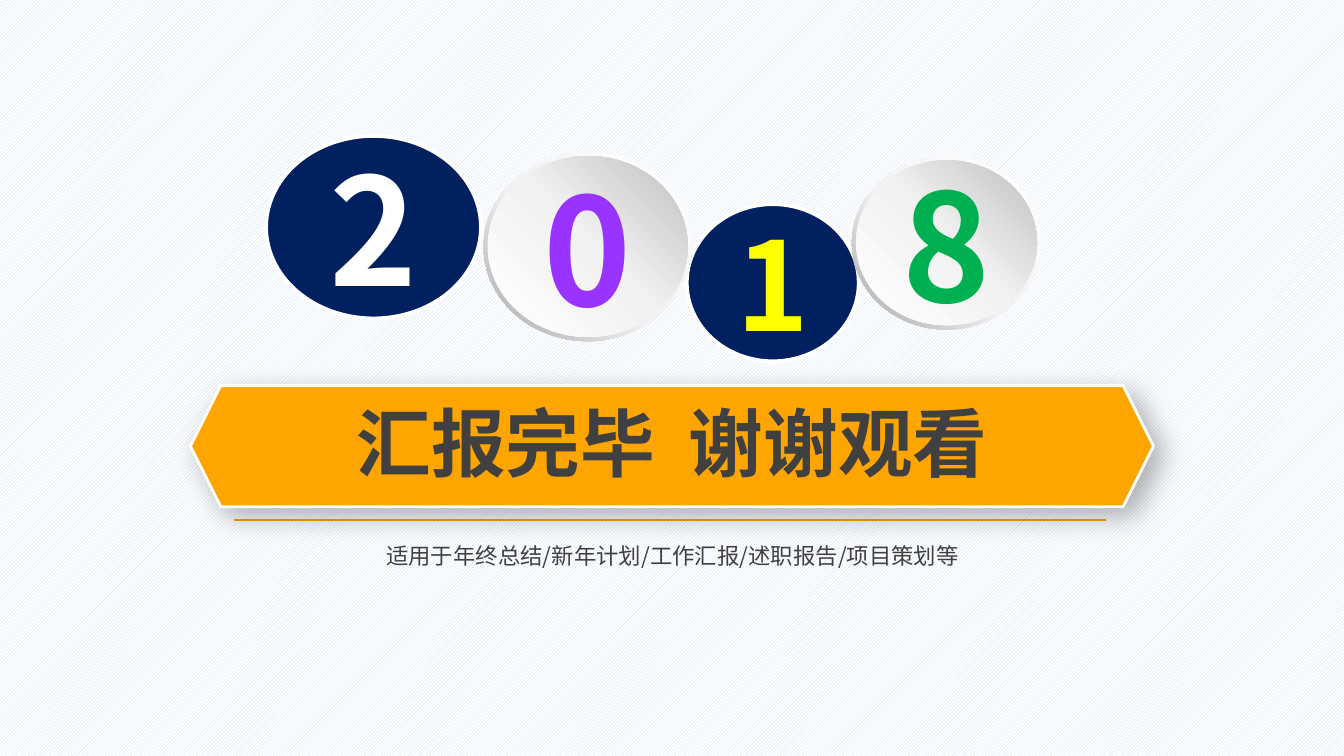
import pptx
import pptx.util
import pptx.dml.color
import pptx.enum.dml
import pptx.enum.shapes
import pptx.enum.text
import pptx.oxml
import pptx.oxml.ns
from dataclasses import dataclass

Cm = pptx.util.Cm
SHAPE = pptx.enum.shapes.MSO_SHAPE


@dataclass(frozen=True)
class Theme:
    font: str = "Noto Sans CJK SC"
    white: str = "FFFFFF"
    stripe: str = "C6D9F1"
    navy: str = "002060"
    orange: str = "FFA500"
    rule: str = "F9A100"
    text: str = "404040"
    purple: str = "9933FF"
    yellow: str = "FFFF00"
    green: str = "00B050"
    ring: tuple = ((0, "FFFFFF"), (55, "F2F2F2"), (100, "A6A6A6"))
    face: tuple = ((0, "FFFFFF"), (51, "F2F2F2"), (100, "BFBFBF"))
    digit: int = 80
    small_digit: int = 66
    title: int = 40
    note: int = 12


T = Theme()


def rgb(value):
    return pptx.dml.color.RGBColor.from_string(value)


def xml(body):
    return pptx.oxml.parse_xml(body.replace(">", " %s>" % pptx.oxml.ns.nsdecls("a"), 1))


def write(sp, text, size, color, bold=False):
    tf = sp.text_frame
    tf.text = text
    tf.word_wrap = True
    tf.auto_size = pptx.enum.text.MSO_AUTO_SIZE.NONE
    tf.vertical_anchor = pptx.enum.text.MSO_ANCHOR.MIDDLE
    p = tf.paragraphs[0]
    p.alignment = pptx.enum.text.PP_ALIGN.CENTER
    p.space_before = pptx.util.Pt(0)
    for r in p.runs:
        r.font.size = pptx.util.Pt(size)
        r.font.bold = bold
        r.font.color.rgb = rgb(color)
        r.font.name = T.font
        r.font._element.find(pptx.oxml.ns.qn("a:latin")).addnext(
            xml('<a:ea typeface="%s"></a:ea>' % T.font))


def place(sp, x, y, w, h):
    sp.left, sp.top, sp.width, sp.height = Cm(x), Cm(y), Cm(w), Cm(h)
    sp.text_frame.margin_left = sp.text_frame.margin_right = 0


def add_solid(shapes, kind, box, fill, line, width):
    sp = shapes.add_shape(kind, *map(Cm, box))
    sp.shadow.inherit = False
    sp.fill.solid()
    sp.fill.fore_color.rgb = rgb(fill)
    sp.line.color.rgb = rgb(line)
    sp.line.width = pptx.util.Pt(width)
    return sp


def add_gradient(shapes, kind, box, stops, angle):
    sp = shapes.add_shape(kind, *map(Cm, box))
    sp.shadow.inherit = False
    sp.line.fill.background()
    gs = "".join('<a:gs pos="%d"><a:srgbClr val="%s"/></a:gs>' % (pos * 1000, c) for pos, c in stops)
    sp.element.spPr.find(pptx.oxml.ns.qn("a:prstGeom")).addnext(xml(
        '<a:gradFill rotWithShape="1"><a:gsLst>%s</a:gsLst>'
        '<a:lin ang="%d" scaled="0"/></a:gradFill>' % (gs, angle * 60000)))
    return sp


def add_disc(s, box, digit, size, color):
    sp = add_solid(s.shapes, SHAPE.OVAL, box, T.navy, T.white, 2)
    write(sp, digit, size, color, True)


def add_button(s, box, digit, size, color):
    x, y, w, h = box
    inset = 0.08
    group = s.shapes.add_group_shape()
    ring = add_gradient(group.shapes, SHAPE.DONUT, box, T.ring, 135)
    ring.adjustments[0] = 0.049
    face = add_gradient(group.shapes, SHAPE.OVAL,
                        (x + inset, y + inset, w - 2 * inset, h - 2 * inset), T.face, 315)
    write(face, digit, size, color, True)


def add_year(s, x, y):
    for add, dx, dy, w, h, digit, size, color in (
        (add_disc, 0, 0, 4.06, 3.45, "2", T.digit, T.white),
        (add_disc, 7.95, 1.29, 3.25, 2.97, "1", T.small_digit, T.yellow),
        (add_button, 4.11, 0.3, 3.94, 3.58, "0", T.digit, T.purple),
        (add_button, 11.07, 0.38, 3.58, 3.28, "8", T.digit, T.green),
    ):
        add(s, (x + dx, y + dy, w, h), digit, size, color)


def add_banner(s, x, y, w, h):
    sp = add_solid(s.shapes, SHAPE.HEXAGON, (x, y, w, h), T.orange, T.white, 1.5)
    sp.element.spPr.find(pptx.oxml.ns.qn("a:effectLst")).append(xml(
        '<a:outerShdw blurRad="190500" dist="76200" dir="2700000" algn="tl" rotWithShape="0">'
        '<a:srgbClr val="000000"><a:alpha val="30000"/></a:srgbClr></a:outerShdw>'))
    title = s.shapes.title
    place(title, x - 0.38, y + 0.53, w + 0.76, 1.07)
    write(title, "汇报完毕  谢谢观看", T.title, T.text, True)
    sp.element.addnext(title.element)


def add_footer(s, x, y, w):
    rule = s.shapes.add_connector(pptx.enum.shapes.MSO_CONNECTOR.STRAIGHT,
                                  Cm(x), Cm(y), Cm(x + w), Cm(y))
    rule.line.color.rgb = rgb(T.rule)
    rule.line.width = pptx.util.Pt(0.75)
    rule.element.spPr.append(xml("<a:effectLst></a:effectLst>"))
    note = s.placeholders[1]
    place(note, x + 2.23, y + 0.43, w - 4.36, 0.48)
    write(note, "适用于年终总结/新年计划/工作汇报/述职报告/项目策划等", T.note, T.text)


def main():
    prs = pptx.Presentation()
    prs.slide_width, prs.slide_height = Cm(25.4), Cm(14.29)
    s = prs.slides.add_slide(prs.slide_layouts[0])
    fill = s.background.fill
    fill.patterned()
    fill.pattern = pptx.enum.dml.MSO_PATTERN.LIGHT_UPWARD_DIAGONAL
    fill.fore_color.rgb = rgb(T.stripe)
    fill.back_color.rgb = rgb(T.white)
    add_footer(s, 4.42, 9.83, 16.48)
    add_banner(s, 3.6, 7.29, 18.2, 2.29)
    add_year(s, 5.03, 2.57)
    prs.save("out.pptx")


if __name__ == "__main__":
    main()
